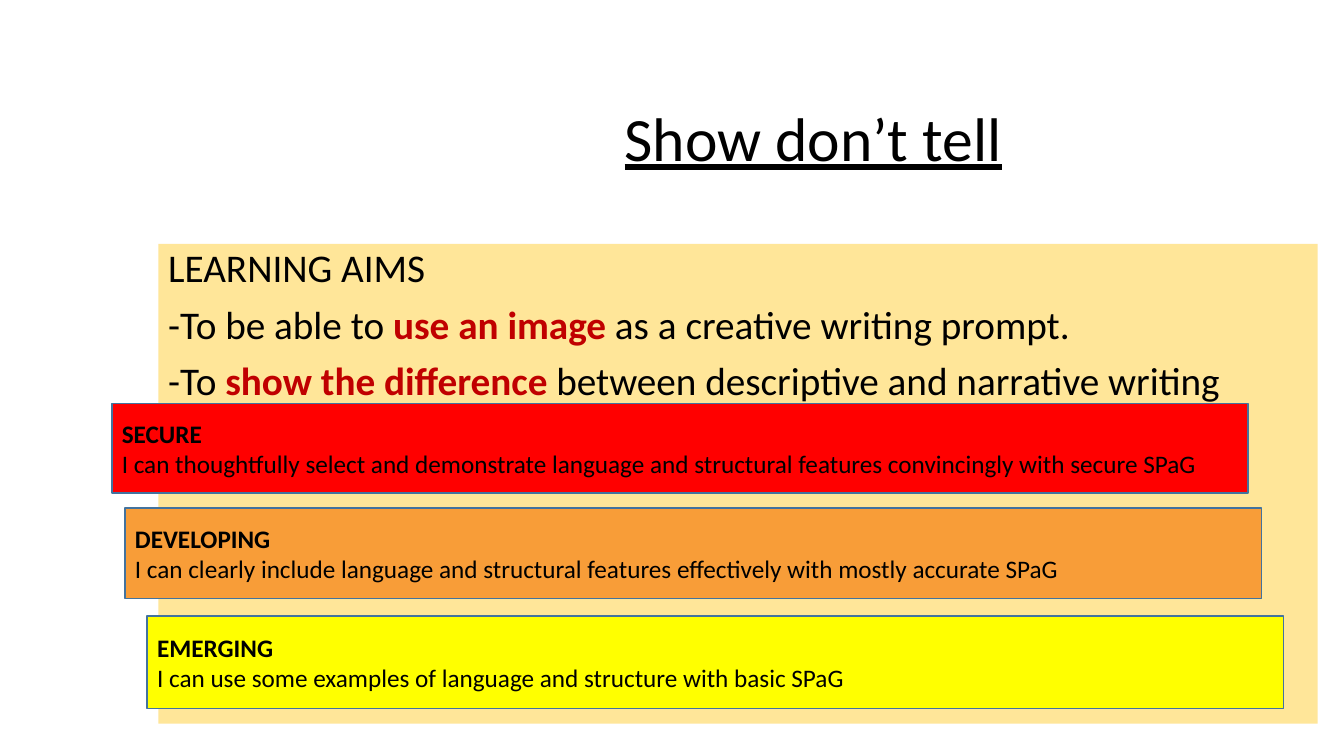
from dataclasses import dataclass

import pptx
import pptx.dml.color
import pptx.enum.shapes
import pptx.enum.text
import pptx.util

Inches = pptx.util.Inches
Pt = pptx.util.Pt
Align = pptx.enum.text.PP_ALIGN
Anchor = pptx.enum.text.MSO_ANCHOR


@dataclass(frozen=True)
class Theme:
    font: str = "Calibri"
    ink: str = "000000"
    accent: str = "C00000"
    panel: str = "FFE699"
    outline: str = "43739E"
    secure: str = "FF0000"
    developing: str = "F89D38"
    emerging: str = "FFFF00"
    title_size: int = 44
    aims_size: int = 28
    level_size: int = 18


THEME = Theme()

AIMS = [
    [("LEARNING AIMS", False)],
    [("-To be able to ", False), ("use an image ", True),
     ("as a creative writing prompt.", False)],
    [("-To ", False), ("show the difference ", True),
     ("between descriptive and narrative writing", False)],
]

LEVELS = [
    ((1.11, 4, 11.27, 0.89), THEME.secure, "SECURE",
     "I can thoughtfully select and demonstrate language and structural "
     "features convincingly with secure SPaG"),
    ((1.24, 5.04, 11.27, 0.9), THEME.developing, "DEVELOPING",
     "I can clearly include language and structural features effectively "
     "with mostly accurate SPaG"),
    ((1.46, 6.11, 11.27, 0.92), THEME.emerging, "EMERGING",
     "I can use some examples of language and structure with basic SPaG"),
]


def rgb(color):
    return pptx.dml.color.RGBColor.from_string(color)


def add_span(para, text, size, color=THEME.ink, bold=False, underline=False):
    span = para.add_run()
    span.text = text
    span.font.name = THEME.font
    span.font.size = Pt(size)
    span.font.color.rgb = rgb(color)
    span.font.bold = bold
    span.font.underline = underline


def add_para(frame, index, align=Align.LEFT):
    para = frame.add_paragraph() if index else frame.paragraphs[0]
    para.alignment = align
    return para


def add_panel(slide, box, fill, anchor):
    panel = slide.shapes.add_shape(
        pptx.enum.shapes.MSO_SHAPE.RECTANGLE, *map(Inches, box))
    panel.shadow.inherit = False
    panel.fill.solid()
    panel.fill.fore_color.rgb = rgb(fill)
    panel.text_frame.word_wrap = True
    panel.text_frame.vertical_anchor = anchor
    return panel


def add_title(slide, box, text):
    frame = slide.shapes.add_textbox(*map(Inches, box)).text_frame
    frame.word_wrap = True
    frame.vertical_anchor = Anchor.MIDDLE
    frame.margin_top = Inches(0.72)
    para = add_para(frame, 0, Align.CENTER)
    para.line_spacing = 0.9
    add_span(para, text, THEME.title_size, underline=True)


def add_aims(slide, box, aims):
    panel = add_panel(slide, box, THEME.panel, Anchor.TOP)
    panel.line.fill.background()
    for index, aim in enumerate(aims):
        para = add_para(panel.text_frame, index)
        para.line_spacing = 0.9
        if index:
            para.space_before = Pt(10)
        for text, stressed in aim:
            color = THEME.accent if stressed else THEME.ink
            add_span(para, text, THEME.aims_size, color, stressed)


def add_level(slide, box, fill, name, statement):
    panel = add_panel(slide, box, fill, Anchor.MIDDLE)
    panel.line.color.rgb = rgb(THEME.outline)
    panel.line.width = Pt(1)
    for index, text in enumerate((name, statement)):
        para = add_para(panel.text_frame, index)
        add_span(para, text, THEME.level_size, bold=index == 0)


def main():
    deck = pptx.Presentation()
    deck.slide_width = Inches(13.33)
    deck.slide_height = Inches(7.5)
    slide = deck.slides.add_slide(deck.slide_layouts[6])
    add_title(slide, (3.27, 0.21, 9.59, 1.71), "Show don’t tell")
    add_aims(slide, (1.57, 2.42, 11.5, 4.76), AIMS)
    for level in LEVELS:
        add_level(slide, *level)
    deck.save("out.pptx")


if __name__ == "__main__":
    main()
